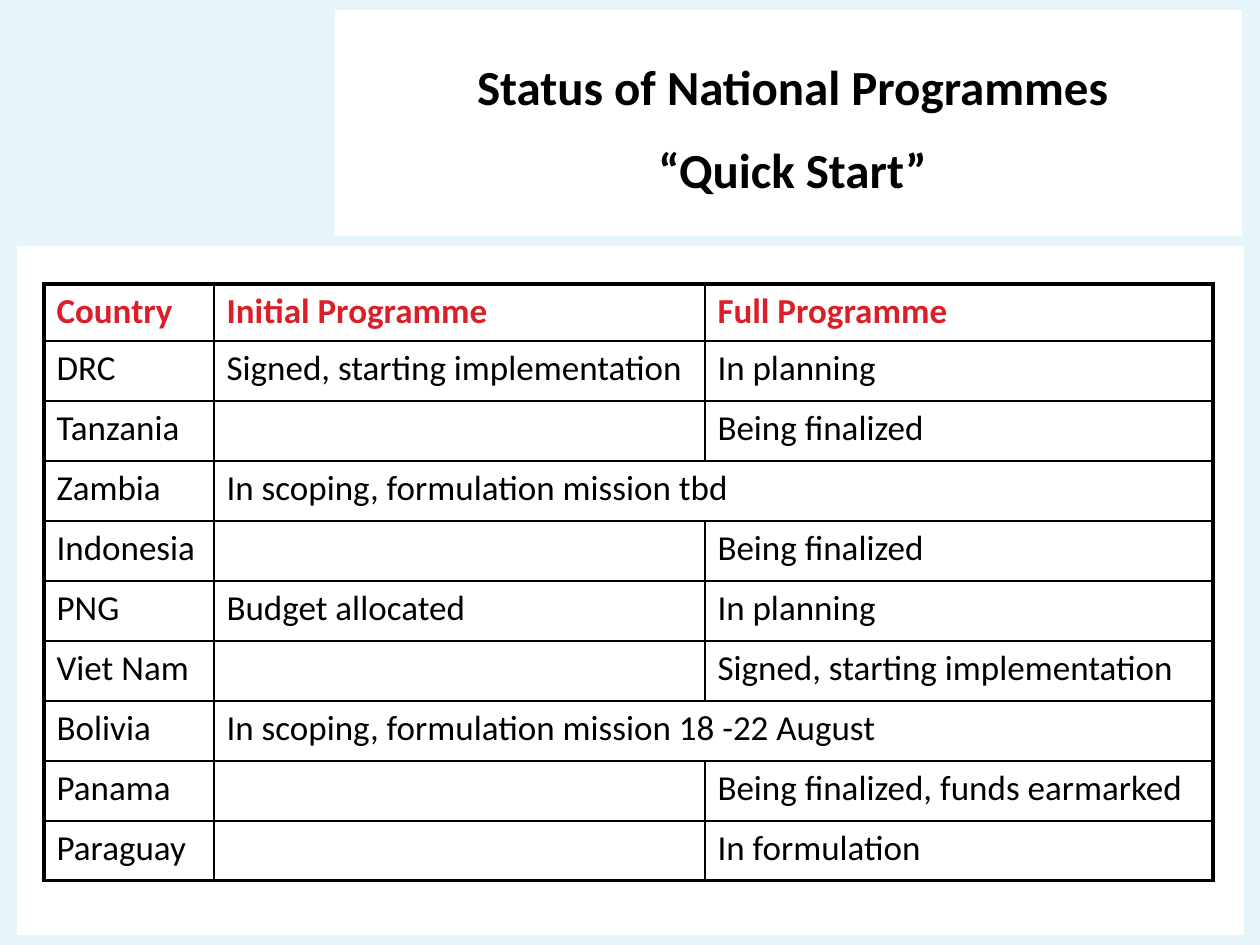
from lxml.etree import SubElement
from pptx import Presentation
from pptx.dml.color import RGBColor
from pptx.enum.shapes import MSO_SHAPE
from pptx.enum.text import MSO_ANCHOR, MSO_AUTO_SIZE, PP_ALIGN
from pptx.oxml.ns import qn
from pptx.util import Emu, Pt

PX = 914400 / 126
SKY = RGBColor(0xE5, 0xF5, 0xFA)
WHITE = RGBColor(0xFF, 0xFF, 0xFF)
BLACK = RGBColor(0, 0, 0)
RED = RGBColor(0xDA, 0x1F, 0x28)
THIN, THICK = Pt(1), Pt(2.25)


def px(*nums):
    """Turn pixel lengths into a list of EMU lengths."""
    return [Emu(round(num * PX)) for num in nums]


def write(frame, text, size=20, color=BLACK, bold=False, align=PP_ALIGN.LEFT, gap=0):
    """Fill a frame with one paragraph per line, set gap points apart."""
    frame.text = text
    for num, para in enumerate(frame.paragraphs):
        para.alignment = align
        para.space_before = Pt(gap if num else 0)
        font = para.font
        font.name, font.size, font.bold = "Calibri", Pt(size), bold
        font.color.rgb = color


deck = Presentation()
deck.slide_width, deck.slide_height = px(1260, 945)
slide = deck.slides.add_slide(deck.slide_layouts[5])
back = slide.background.fill
back.solid()
back.fore_color.rgb = SKY

# White panels, placed behind the title
title = slide.shapes.title
for box in [(17, 246, 1227, 689), (335, 10, 907, 226)]:
    panel = slide.shapes.add_shape(MSO_SHAPE.RECTANGLE, *px(*box))
    panel.shadow.inherit = False
    panel.fill.solid()
    panel.fill.fore_color.rgb = WHITE
    panel.line.fill.background()
    title.element.addprevious(panel.element)

title.left, title.top, title.width, title.height = px(354, 50, 877, 161)
frame = title.text_frame
frame.word_wrap = True
frame.auto_size = MSO_AUTO_SIZE.SHAPE_TO_FIT_TEXT
frame.vertical_anchor = MSO_ANCHOR.TOP
write(frame, "Status of National Programmes\n“Quick Start”",
      size=28, bold=True, align=PP_ALIGN.CENTER, gap=14)

# A row with two entries spans its last two columns
rows = [
    ("Country", "Initial Programme", "Full Programme"),
    ("DRC", "Signed, starting implementation", "In planning"),
    ("Tanzania", "", "Being finalized"),
    ("Zambia", "In scoping, formulation mission tbd"),
    ("Indonesia", "", "Being finalized"),
    ("PNG", "Budget allocated", "In planning"),
    ("Viet Nam", "", "Signed, starting implementation"),
    ("Bolivia", "In scoping, formulation mission 18 -22 August"),
    ("Panama", "", "Being finalized, funds earmarked"),
    ("Paraguay", "", "In formulation"),
]
last = len(rows) - 1
table = slide.shapes.add_table(len(rows), 3, *px(44, 284, 1169, 596)).table
table.first_row = table.horz_banding = False
for col, width in zip(table.columns, px(170, 491, 508)):
    col.width = width

for r, row in enumerate(rows):
    table.rows[r].height = px(57 if r == 0 else 60)[0]
    if len(row) == 2:
        table.cell(r, 1).merge(table.cell(r, 2))
    for c in range(3):
        cell = table.cell(r, c)
        edges = {
            "L": c == 0,
            "R": c == 2 or cell.is_merge_origin,
            "T": r == 0,
            "B": r == last,
        }
        props = cell._tc.get_or_add_tcPr()
        for side, outer in edges.items():
            if cell.is_spanned and side == "L":
                continue
            line = SubElement(props, qn(f"a:ln{side}"), w=str(THICK if outer else THIN))
            SubElement(SubElement(line, qn("a:solidFill")), qn("a:srgbClr"), val=str(BLACK))
        cell.fill.solid()
        cell.fill.fore_color.rgb = WHITE
        if c < len(row):
            write(cell.text_frame, row[c], color=BLACK if r else RED, bold=r == 0)

deck.save("out.pptx")
